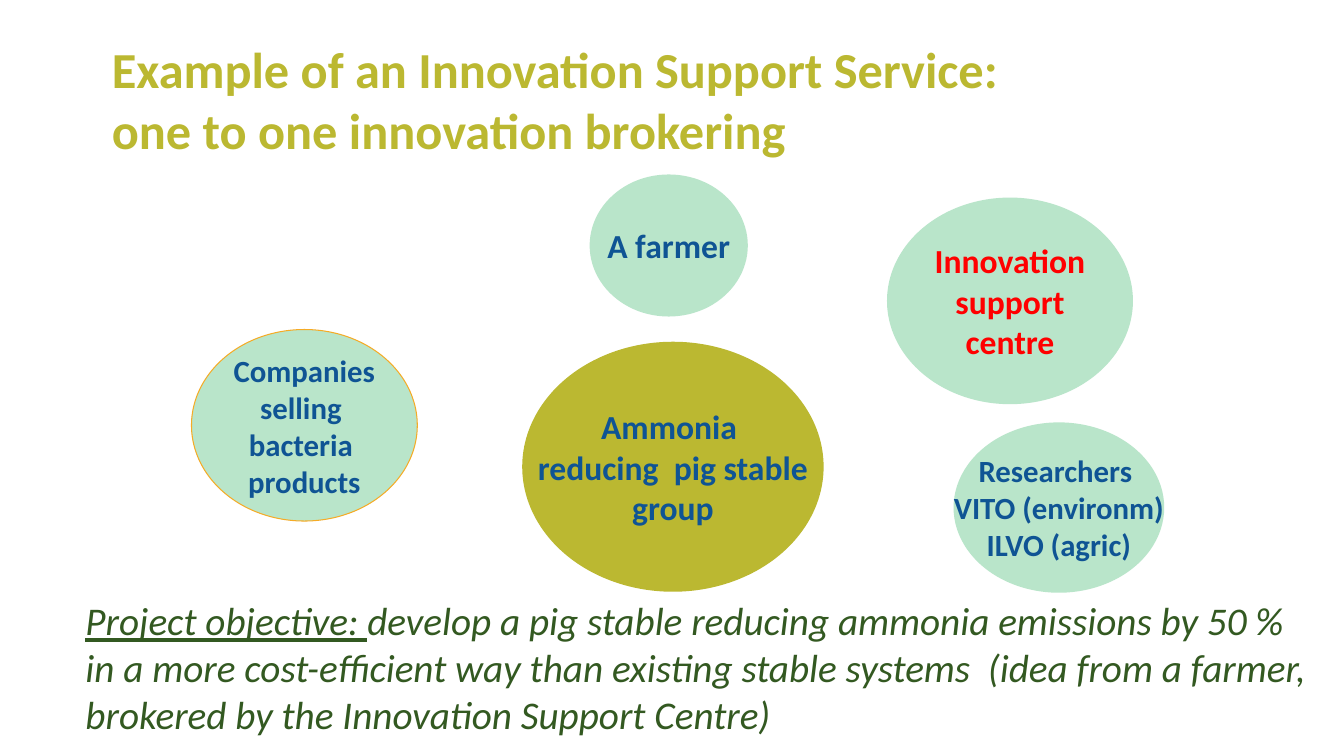
from pptx import Presentation
from pptx.dml.color import RGBColor
from pptx.enum.shapes import MSO_SHAPE
from pptx.enum.text import MSO_ANCHOR, MSO_AUTO_SIZE, PP_ALIGN
from pptx.util import Pt

COLORS = {
    "mint": "B9E5CA",
    "olive": "BBB831",
    "orange": "F5AB26",
    "blue": "0F5494",
    "red": "FF0000",
    "green": "335921",
}


def color(name):
    return RGBColor.from_string(COLORS[name])


def add_text(paragraph, text, *, size, ink, bold=False, italic=False, underline=False):
    run = paragraph.add_run()
    run.text = text
    font = run.font
    font.name = "Calibri"
    font.size = Pt(size)
    font.color.rgb = color(ink)
    font.bold, font.italic, font.underline = bold, italic, underline


class BrokeringSlide:
    """Holds the current slide and builds its elements in the shared style."""

    def __init__(self, slide):
        self.slide = slide

    def write_lines(self, frame, lines, align, **style):
        """Fill a text frame with one paragraph per line."""
        for number, line in enumerate(lines):
            paragraph = frame.add_paragraph() if number else frame.paragraphs[0]
            paragraph.alignment = align
            paragraph.space_before = Pt(0)
            add_text(paragraph, line, bold=True, **style)

    def title(self, lines, left, top, width, height):
        shape = self.slide.shapes.title
        shape.left, shape.top = Pt(left), Pt(top)
        shape.width, shape.height = Pt(width), Pt(height)
        frame = shape.text_frame
        frame.auto_size = MSO_AUTO_SIZE.NONE
        frame.vertical_anchor = MSO_ANCHOR.TOP
        self.write_lines(frame, lines, PP_ALIGN.LEFT, size=36, ink="olive")

    def actor(self, lines, left, top, width, height, *, size=24, ink="blue",
              fill="mint", outline=None):
        shape = self.slide.shapes.add_shape(
            MSO_SHAPE.OVAL, Pt(left), Pt(top), Pt(width), Pt(height))
        shape.shadow.inherit = False
        shape.fill.solid()
        shape.fill.fore_color.rgb = color(fill)
        if outline:
            shape.line.color.rgb = color(outline)
            shape.line.width = Pt(0.75)
        else:
            shape.line.fill.background()
        frame = shape.text_frame
        frame.word_wrap = False
        frame.vertical_anchor = MSO_ANCHOR.MIDDLE
        self.write_lines(frame, lines, PP_ALIGN.CENTER, size=size, ink=ink)

    def objective(self, label, text, left, top, width, height):
        box = self.slide.shapes.add_textbox(Pt(left), Pt(top), Pt(width), Pt(height))
        frame = box.text_frame
        frame.word_wrap = True
        frame.auto_size = MSO_AUTO_SIZE.SHAPE_TO_FIT_TEXT
        style = {"size": 28, "ink": "green", "italic": True}
        add_text(frame.paragraphs[0], label, underline=True, **style)
        add_text(frame.paragraphs[0], text, **style)


def main():
    presentation = Presentation()
    presentation.slide_width, presentation.slide_height = Pt(960), Pt(540)
    title_only = presentation.slide_layouts[5]
    page = BrokeringSlide(presentation.slides.add_slide(title_only))

    page.title(["Example of an Innovation Support Service:",
                "one to one innovation brokering"], 72.7, 23.8, 887, 73.4)
    page.actor(["Companies", "selling ", "bacteria ", "products"],
               136.8, 235.4, 161.3, 136.8, size=22, outline="orange")
    page.actor(["A farmer"], 421.2, 124.6, 113, 101.5)
    page.actor(["Innovation", "support", "centre"],
               633.6, 141.1, 175.7, 147.6, ink="red")
    page.actor(["Researchers ", "VITO (environm)", "ILVO (agric)"],
               681.1, 301.7, 150.5, 121.7, size=22)
    page.actor(["Ammonia ", "reducing  pig stable", "group"],
               373, 244.1, 215.3, 178.6, fill="olive")
    page.objective(
        "Project objective: ",
        "develop a pig stable reducing ammonia emissions by 50 % in a more "
        "cost-efficient way than existing stable systems  (idea from a farmer, "
        "brokered by the Innovation Support Centre)",
        54, 422.6, 887.8, 108.7)

    presentation.save("out.pptx")


if __name__ == "__main__":
    main()
